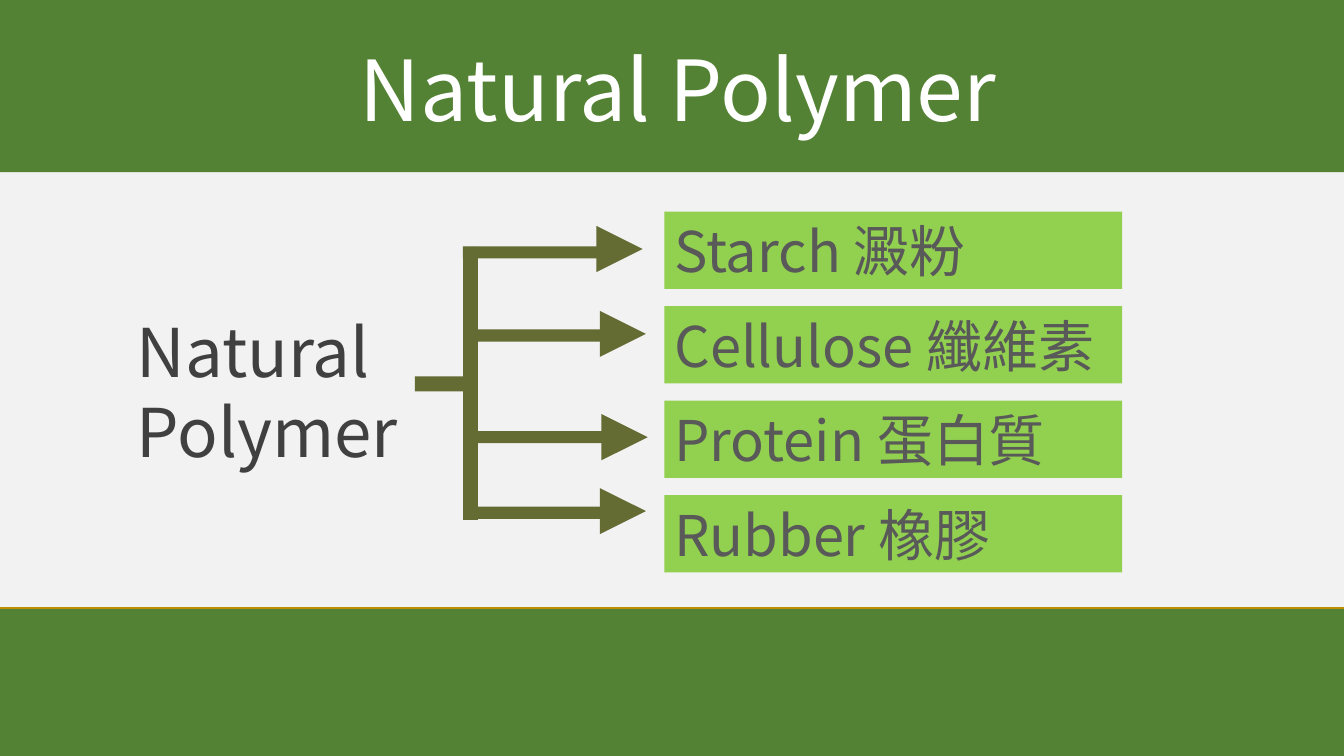
import pptx
import pptx.dml.color
import pptx.enum.shapes
import pptx.enum.text
import pptx.util

COLS, ROWS = 160, 90
WIDE, HIGH = pptx.util.Inches(13.33), pptx.util.Inches(7.5)
FONT = "Noto Sans CJK TC"
GREEN, OLIVE, LIME = "548235", "646C34", "92D050"
KIND = pptx.enum.shapes.MSO_SHAPE
ALIGN = pptx.enum.text.PP_ALIGN

LABELS = [("Starch ", "澱粉"), ("Cellulose ", "纖維素"),
          ("Protein ", "蛋白質"), ("Rubber ", "橡膠")]
# shaft (left, top, width), head (left, top), stem (top, height)
ARMS = [((55.1, 28.6, 18), (71, 26.9), (29.4, 17)),
        ((55.9, 38.5, 18), (71.4, 37), None),
        ((56, 50.6, 18), (71.6, 49.3), (44.5, 8.3)),
        ((55.3, 59.6, 19.2), (71.4, 58.1), (45.2, 16.7))]


def cells(left, top, width, height):
    """Turn grid columns and rows into lengths."""
    return (round(left * WIDE / COLS), round(top * HIGH / ROWS),
            round(width * WIDE / COLS), round(height * HIGH / ROWS))


def paint(color, code):
    color.rgb = pptx.dml.color.RGBColor.from_string(code)


def draw(shapes, kind, area, fill, line=None):
    shape = shapes.add_shape(kind, *cells(*area))
    shape.shadow.inherit = False
    shape.fill.solid()
    paint(shape.fill.fore_color, fill)
    if line:
        paint(shape.line.color, line)
        shape.line.width = pptx.util.Pt(1)
    else:
        shape.line.fill.background()
    return shape


def write(shape, texts, size, color, align=ALIGN.LEFT, pitch=None):
    """Fill a shape with one paragraph, one run for each text."""
    frame = shape.text_frame
    frame.word_wrap = True
    frame.auto_size = pptx.enum.text.MSO_AUTO_SIZE.NONE
    frame.vertical_anchor = pptx.enum.text.MSO_ANCHOR.MIDDLE
    para = frame.paragraphs[0]
    para.alignment = align
    para.space_before = pptx.util.Pt(0)
    para.line_spacing = pptx.util.Pt(pitch) if pitch else 1.0
    for text in texts:
        run = para.add_run()
        run.text = text
        run.font.name = FONT
        run.font.size = pptx.util.Pt(size)
        paint(run.font.color, color)
        props = run.font._element
        east = props.makeelement(pptx.oxml.ns.qn("a:ea"), {"typeface": FONT})
        props.find(pptx.oxml.ns.qn("a:latin")).addnext(east)


def branch(shapes, shaft, head, stem):
    """Group a shaft, its head and the part of the stem that feeds it."""
    group = shapes.add_group_shape().shapes
    draw(group, KIND.RIGHT_ARROW, (*shaft, 2.9), OLIVE)
    tip = draw(group, KIND.ISOSCELES_TRIANGLE, (*head, 5.5, 5.5), OLIVE)
    tip.rotation = 90
    if stem:
        draw(group, KIND.RECTANGLE, (55.15, stem[0], 1.75, stem[1]), OLIVE)


def label(shapes, row, names):
    box = draw(shapes, KIND.RECTANGLE, (79.1, 25.2 + 11.25 * row, 54.5, 9.2), LIME)
    write(box, names, 40, "595959")


def main():
    deck = pptx.Presentation()
    deck.slide_width, deck.slide_height = WIDE, HIGH
    slide = deck.slides.add_slide(deck.slide_layouts[5])
    shapes = slide.shapes

    draw(shapes, KIND.RECTANGLE, (-1.6, -1.3, 163.3, 96.2), "F2F2F2", "43739E")
    draw(shapes, KIND.RECTANGLE, (-1.6, -1.3, 163.3, 21.8), GREEN)
    draw(shapes, KIND.RECTANGLE, (-1.6, 72.4, 163.3, 22.6), GREEN, "BD8E00")

    title = shapes.title
    title.left, title.top, title.width, title.height = cells(9.4, 3.8, 142.6, 13.3)
    write(title, ["Natural Polymer"], 60, "FFFFFF", ALIGN.CENTER)
    shapes._spTree.append(title._element)

    root = shapes.add_textbox(*cells(15.1, 36.3, 36.1, 20.6))
    write(root, ["Natural Polymer"], 48, "404040", pitch=57)

    draw(shapes, KIND.RECTANGLE, (49.4, 44.8, 6.5, 1.8), OLIVE)
    for arm in ARMS:
        branch(shapes, *arm)
    for row, names in enumerate(LABELS):
        label(shapes, row, names)

    deck.save("out.pptx")


if __name__ == "__main__":
    main()
